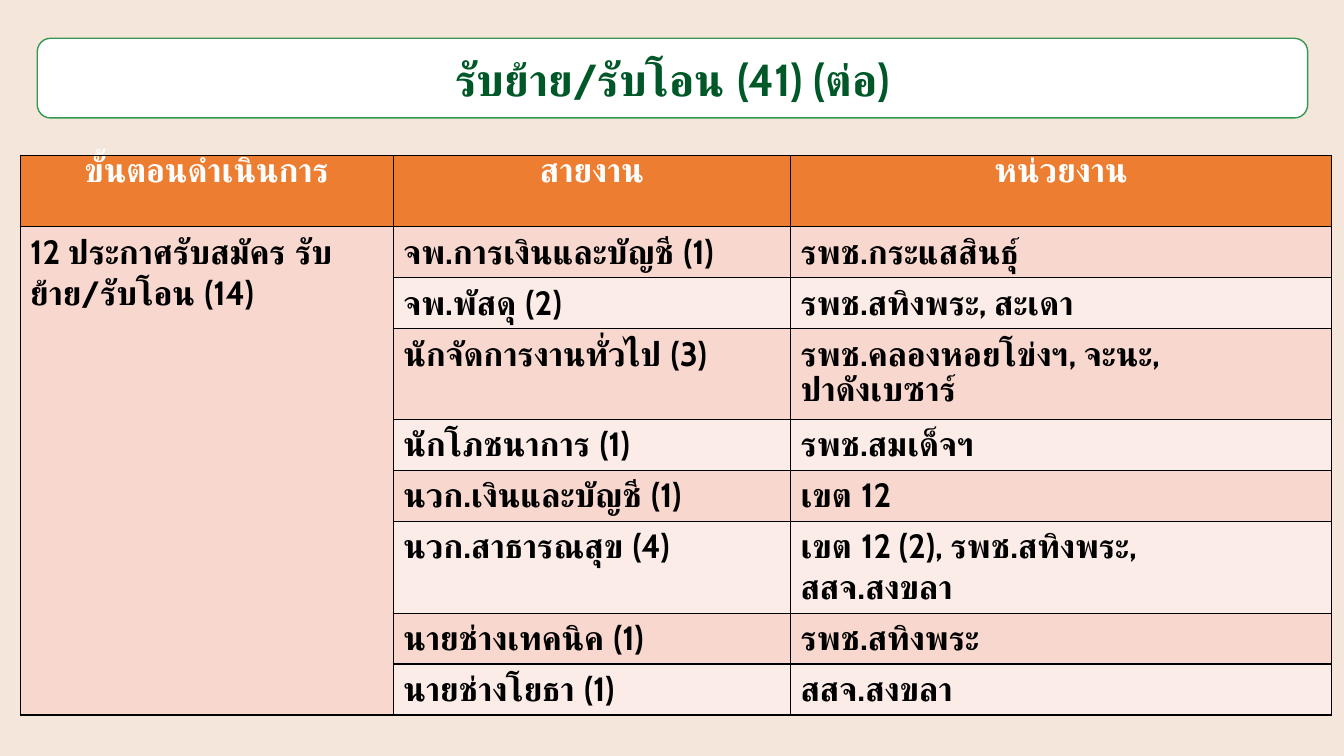
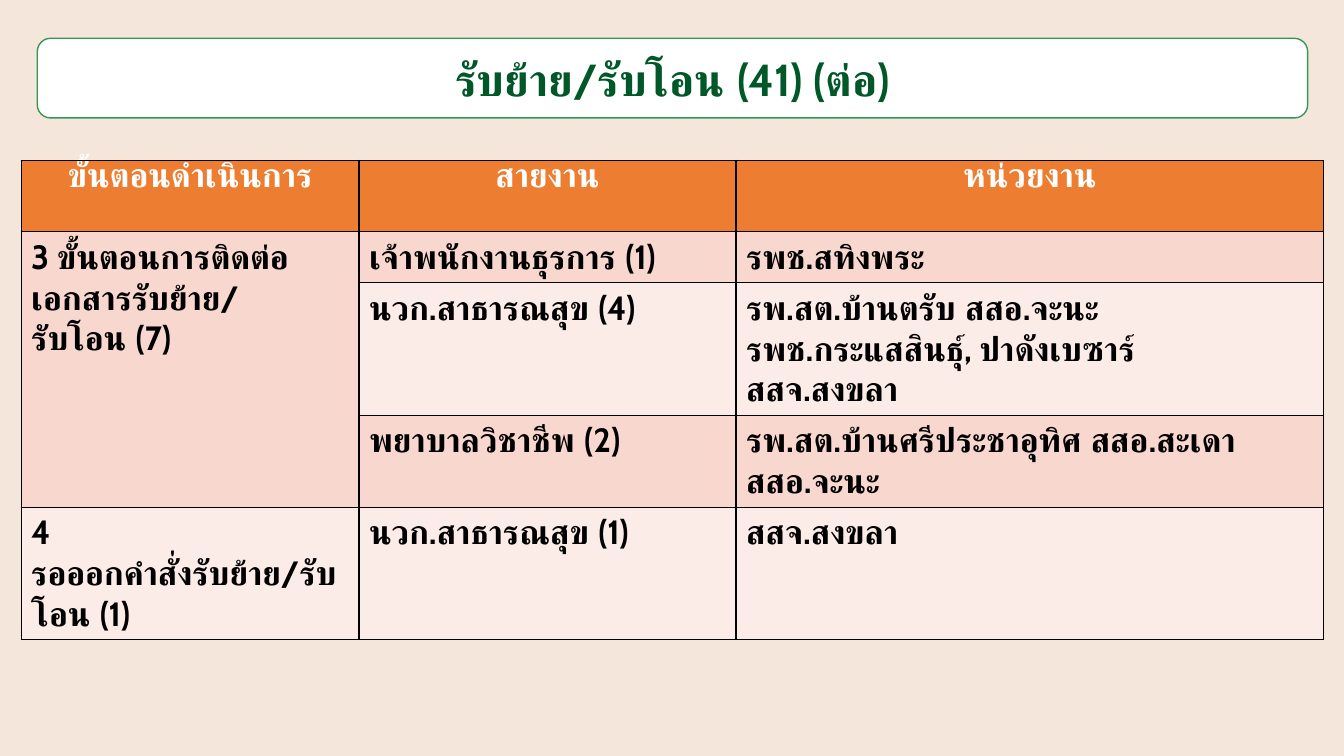
import dataclasses

import lxml.etree
import pptx
import pptx.dml.color
import pptx.enum.shapes
import pptx.enum.text
import pptx.oxml.ns
import pptx.util


@dataclasses.dataclass(frozen=True)
class Theme:
    font: str = "Cabin"
    title_size: int = 32
    table_size: int = 24
    paper: str = "F5E6DB"
    panel: str = "FFFFFF"
    panel_edge: str = "359751"
    title: str = "005828"
    header: str = "ED7D31"
    header_text: str = "FFFFFF"
    body_text: str = "000000"
    border: str = "000000"
    bands: tuple = ("FCECE8", "F8D7CE")


theme = Theme()
Inches, Pt = pptx.util.Inches, pptx.util.Pt
rgb = pptx.dml.color.RGBColor.from_string
align = pptx.enum.text.PP_ALIGN


def write(frame, text, size, color, alignment=align.LEFT):
    """Fill a text frame: one paragraph per line, \\v for a break within one."""
    frame.word_wrap = True
    frame.text = text
    for paragraph in frame.paragraphs:
        paragraph.alignment = alignment
        for run in paragraph.runs:
            run.font.name = theme.font
            run.font.size = Pt(size)
            run.font.bold = True
            run.font.color.rgb = rgb(color)


def paint_cell(cell, color):
    """Give a cell its fill and four thin borders."""
    qn = pptx.oxml.ns.qn
    properties = cell._tc.get_or_add_tcPr()
    for side in ("lnL", "lnR", "lnT", "lnB"):
        edge = lxml.etree.SubElement(properties, qn(f"a:{side}"), w=str(Pt(1)))
        paint = lxml.etree.SubElement(edge, qn("a:solidFill"))
        lxml.etree.SubElement(paint, qn("a:srgbClr"), val=theme.border)
    cell.fill.solid()
    cell.fill.fore_color.rgb = rgb(color)


# Content: each step holds its rows of (line of work, unit)
heading = "รับย้าย/รับโอน (41) (ต่อ)"
column_names = ("ขั้นตอนดำเนินการ", "สายงาน", "หน่วยงาน")
pages = [
    {
        "corner": (0.2, 1.54),
        "columns": (3.7, 3.94, 5.37),
        "steps": [
            ("12 ประกาศรับสมัคร รับย้าย/รับโอน (14)", 2, [
                ("จพ.การเงินและบัญชี (1)", "รพช.กระแสสินธุ์"),
                ("จพ.พัสดุ (2)", "รพช.สทิงพระ, สะเดา"),
                ("นักจัดการงานทั่วไป (3)", "รพช.คลองหอยโข่งฯ, จะนะ,\nปาดังเบซาร์"),
                ("นักโภชนาการ (1)", "รพช.สมเด็จฯ"),
                ("นวก.เงินและบัญชี (1)", "เขต 12"),
                ("นวก.สาธารณสุข (4)", "เขต 12 (2), รพช.สทิงพระ,\nสสจ.สงขลา"),
                ("นายช่างเทคนิค (1)", "รพช.สทิงพระ"),
                ("นายช่างโยธา (1)", "สสจ.สงขลา"),
            ]),
        ],
    },
    {
        "corner": (0.21, 1.59),
        "columns": (3.35, 3.74, 5.83),
        "steps": [
            ("3 ขั้นตอนการติดต่อเอกสารรับย้าย/\vรับโอน (7)", 3, [
                ("เจ้าพนักงานธุรการ (1)", "รพช.สทิงพระ"),
                ("นวก.สาธารณสุข (4)",
                 "รพ.สต.บ้านตรับ สสอ.จะนะ\nรพช.กระแสสินธุ์, ปาดังเบซาร์\nสสจ.สงขลา"),
                ("พยาบาลวิชาชีพ (2)", "รพ.สต.บ้านศรีประชาอุทิศ สสอ.สะเดา\nสสอ.จะนะ"),
            ]),
            ("4 รอออกคำสั่งรับย้าย/รับโอน (1)", 3, [
                ("นวก.สาธารณสุข (1)", "สสจ.สงขลา"),
            ]),
        ],
    },
]
header_height, row_height, extra_line = 0.71, 0.5, 0.4

# Shared page: paper colour and title position
deck = pptx.Presentation()
deck.slide_width, deck.slide_height = Inches(13.33), Inches(7.5)
paper = deck.slide_master.background.fill
paper.solid()
paper.fore_color.rgb = rgb(theme.paper)

layout = deck.slide_layouts.get_by_name("Title Only")
title_box = [Inches(length) for length in (0.37, 0.38, 12.6, 0.79)]
shared_title = layout.placeholders[0]
shared_title.left, shared_title.top, shared_title.width, shared_title.height = title_box

for page in pages:
    slide = deck.slides.add_slide(layout)

    # Title on its rounded panel
    title = slide.shapes.title
    write(title.text_frame, heading, theme.title_size, theme.title, align.CENTER)
    title.text_frame.auto_size = pptx.enum.text.MSO_AUTO_SIZE.NONE
    title.text_frame.vertical_anchor = pptx.enum.text.MSO_ANCHOR.MIDDLE
    panel = slide.shapes.add_shape(
        pptx.enum.shapes.MSO_SHAPE.ROUNDED_RECTANGLE, *title_box)
    panel.shadow.inherit = False
    panel.fill.solid()
    panel.fill.fore_color.rgb = rgb(theme.panel)
    panel.line.color.rgb = rgb(theme.panel_edge)
    panel.line.width = Pt(1)
    title.element.addprevious(panel.element)

    # Table grid: a row grows with its number of lines
    row_heights = [header_height]
    for step, step_lines, rows in page["steps"]:
        for work, unit in rows:
            lines = unit.count("\n") + 1
            if len(rows) == 1:
                lines = max(lines, step_lines)
            row_heights.append(row_height + extra_line * (lines - 1))
    left, top = page["corner"]
    table = slide.shapes.add_table(
        len(row_heights), len(column_names), Inches(left), Inches(top),
        Inches(sum(page["columns"])), Inches(sum(row_heights))).table
    table.horz_banding = False
    for column, width in zip(table.columns, page["columns"]):
        column.width = Inches(width)
    for index, height in enumerate(row_heights):
        table.rows[index].height = Inches(height)
        for cell in table.rows[index].cells:
            paint_cell(cell, theme.bands[index % 2] if index else theme.header)

    # Header row
    for cell, name in zip(table.rows[0].cells, column_names):
        cell.margin_top = 0
        write(cell.text_frame, name, theme.table_size, theme.header_text, align.CENTER)

    # Steps, each spanning its rows
    first = 1
    for step, step_lines, rows in page["steps"]:
        step_cell = table.cell(first, 0)
        if len(rows) > 1:
            step_cell.merge(table.cell(first + len(rows) - 1, 0))
        write(step_cell.text_frame, step, theme.table_size, theme.body_text)
        for index, row in enumerate(rows, first):
            for column, text in enumerate(row, 1):
                write(table.cell(index, column).text_frame, text,
                      theme.table_size, theme.body_text)
        first += len(rows)

deck.save("out.pptx")
